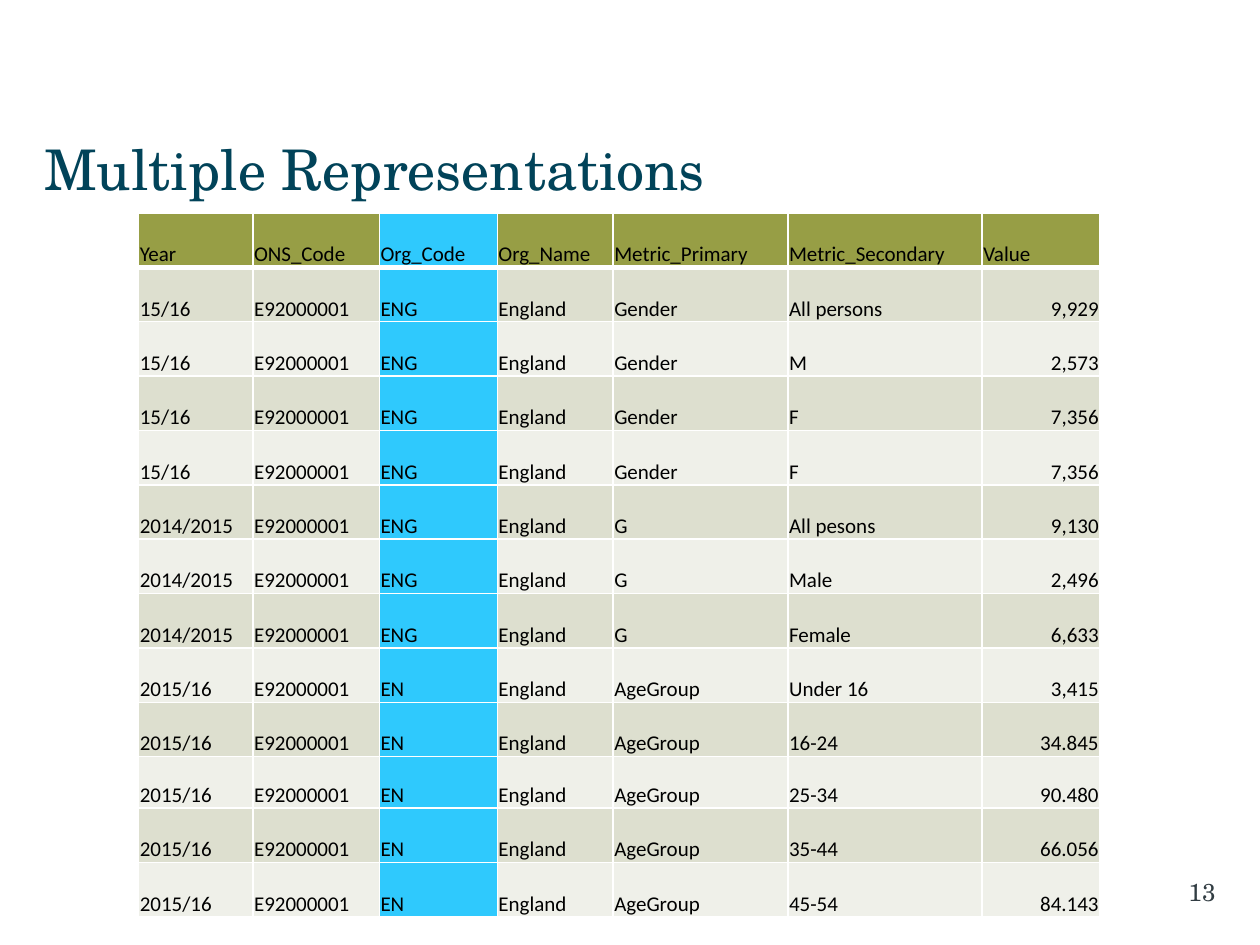
from dataclasses import dataclass

from lxml import etree
from pptx import Presentation
from pptx.dml.color import RGBColor
from pptx.enum.text import MSO_ANCHOR, PP_ALIGN
from pptx.oxml.ns import qn
from pptx.slide import Slide
from pptx.table import _Cell
from pptx.util import Pt

LEFT, RIGHT = PP_ALIGN.LEFT, PP_ALIGN.RIGHT
MIDDLE, BOTTOM = MSO_ANCHOR.MIDDLE, MSO_ANCHOR.BOTTOM


@dataclass(frozen=True)
class Theme:
    heading_font: str = "TeX Gyre Schola"
    table_font: str = "Calibri"
    title_size: float = 32
    number_size: float = 14
    table_size: float = 12
    title: str = "014359"
    number: str = "323D43"
    table_text: str = "000000"
    header: str = "979E45"
    highlight: str = "2FC9FD"
    bands: tuple[str, str] = ("DDDFCF", "EFF0E9")
    border: str = "FFFFFF"
    thin: float = 1
    thick: float = 3


@dataclass(frozen=True)
class Label:
    text: str
    box: tuple[float, float, float, float]
    size: float
    color: str
    align: PP_ALIGN
    left_inset: float
    right_inset: float


@dataclass(frozen=True)
class Column:
    name: str
    width: float
    align: PP_ALIGN = LEFT
    highlighted: bool = False


THEME = Theme()
PAGE_NUMBER = Label("13", (556.5, 497.5, 138.2, 24.5), THEME.number_size, THEME.number, RIGHT, 7.2, 0)
TITLE = Label("Multiple Representations", (25.2, 70.6, 668.9, 51.1), THEME.title_size, THEME.title, LEFT, 0, 7.2)

TABLE_LEFT, TABLE_TOP = 79.2, 121.7
ROW_HEIGHT, SHORT_ROW_HEIGHT = 31.08, 29.5
SHORT_ROW = 10
COLUMNS = (
    Column("Year", 65.3),
    Column("ONS_Code", 72.3),
    Column("Org_Code", 67.4, highlighted=True),
    Column("Org_Name", 66.2),
    Column("Metric_Primary", 99.9),
    Column("Metric_Secondary", 111),
    Column("Value", 67.3, RIGHT),
)
# Each group shares year, organisation code and primary metric.
GROUPS = (
    ("15/16", "ENG", "Gender",
     (("All persons", "9,929"), ("M", "2,573"), ("F", "7,356"), ("F", "7,356"))),
    ("2014/2015", "ENG", "G",
     (("All pesons", "9,130"), ("Male", "2,496"), ("Female", "6,633"))),
    ("2015/16", "EN", "AgeGroup",
     (("Under 16", "3,415"), ("16-24", "34.845"), ("25-34", "90.480"),
      ("35-44", "66.056"), ("45-54", "84.143"))),
)
RECORDS = [
    (year, "E92000001", code, "England", primary, secondary, value)
    for year, code, primary, measures in GROUPS
    for secondary, value in measures
]


def add_label(slide: Slide, label: Label) -> None:
    shape = slide.shapes.add_textbox(*(Pt(length) for length in label.box))
    frame = shape.text_frame
    frame.word_wrap = True
    frame.vertical_anchor = MIDDLE
    frame.margin_left, frame.margin_right = Pt(label.left_inset), Pt(label.right_inset)
    frame.margin_top = frame.margin_bottom = Pt(3.6)
    paragraph = frame.paragraphs[0]
    paragraph.text = label.text
    paragraph.alignment = label.align
    paragraph.font.name = THEME.heading_font
    paragraph.font.size = Pt(label.size)
    paragraph.font.color.rgb = RGBColor.from_string(label.color)


def set_borders(cell: _Cell, top: float, bottom: float) -> None:
    """Add the border lines; must run before the cell gets its fill."""
    properties = cell._tc.get_or_add_tcPr()
    widths = {"a:lnL": THEME.thin, "a:lnR": THEME.thin, "a:lnT": top, "a:lnB": bottom}
    for tag, width in widths.items():
        line = etree.SubElement(properties, qn(tag), w=str(Pt(width)))
        fill = etree.SubElement(line, qn("a:solidFill"))
        etree.SubElement(fill, qn("a:srgbClr"), val=THEME.border)


def fill_cell(cell: _Cell, text: str, color: str, align: PP_ALIGN) -> None:
    cell.fill.solid()
    cell.fill.fore_color.rgb = RGBColor.from_string(color)
    cell.vertical_anchor = BOTTOM
    cell.margin_left = cell.margin_right = cell.margin_top = Pt(0.7)
    cell.margin_bottom = Pt(0)
    paragraph = cell.text_frame.paragraphs[0]
    paragraph.text = text
    paragraph.alignment = align
    paragraph.font.name = THEME.table_font
    paragraph.font.size = Pt(THEME.table_size)
    paragraph.font.bold = False
    paragraph.font.color.rgb = RGBColor.from_string(THEME.table_text)


def add_metrics_table(slide: Slide) -> None:
    rows = [tuple(column.name for column in COLUMNS), *RECORDS]
    heights = [SHORT_ROW_HEIGHT if index == SHORT_ROW else ROW_HEIGHT for index in range(len(rows))]
    width = sum(column.width for column in COLUMNS)
    table = slide.shapes.add_table(
        len(rows), len(COLUMNS), Pt(TABLE_LEFT), Pt(TABLE_TOP), Pt(width), Pt(sum(heights))
    ).table
    for table_column, column in zip(table.columns, COLUMNS):
        table_column.width = Pt(column.width)
    for row_index, (row, height) in enumerate(zip(rows, heights)):
        table.rows[row_index].height = Pt(height)
        is_header = row_index == 0
        row_color = THEME.header if is_header else THEME.bands[(row_index - 1) % 2]
        top = THEME.thick if row_index == 1 else THEME.thin
        bottom = THEME.thick if is_header else THEME.thin
        for column_index, (column, text) in enumerate(zip(COLUMNS, row)):
            cell = table.cell(row_index, column_index)
            set_borders(cell, top, bottom)
            color = THEME.highlight if column.highlighted else row_color
            fill_cell(cell, text, color, LEFT if is_header else column.align)


def main() -> None:
    presentation = Presentation()
    presentation.slide_width, presentation.slide_height = Pt(720), Pt(540)
    slide = presentation.slides.add_slide(presentation.slide_layouts[6])
    add_label(slide, PAGE_NUMBER)
    add_metrics_table(slide)
    add_label(slide, TITLE)
    presentation.save("out.pptx")


if __name__ == "__main__":
    main()
